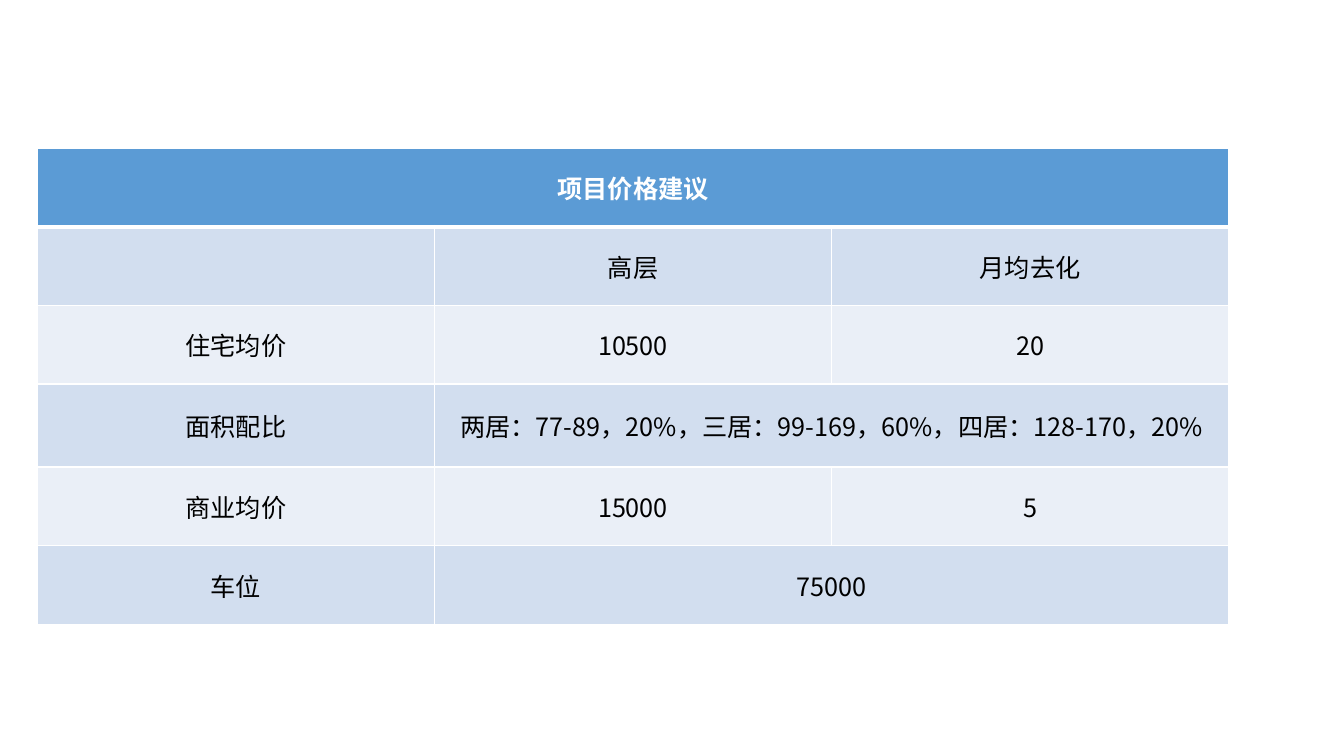
from dataclasses import dataclass

from lxml import etree
from pptx import Presentation
from pptx import util as u
from pptx.dml.color import RGBColor
from pptx.enum import text
from pptx.oxml import ns


# Colours, type and line widths
@dataclass(frozen=True)
class Theme:
    head: str = "5B9BD5"
    dark: str = "D2DEEF"
    light: str = "EAEFF7"
    white: str = "FFFFFF"
    black: str = "000000"
    font: str = "Noto Sans CJK SC"
    size: float = 18
    rule: float = 1
    thick: float = 3


@dataclass(frozen=True)
class Entry:
    words: str = ""
    span: int = 1


THEME = Theme()
LEFT, TOP = 26.64, 105.84
WIDE, HIGH = 283.68, 56.16
COLS = 3

# Price table content
ROWS = [
    [Entry("项目价格建议", span=3)],
    [Entry(), Entry("高层"), Entry("月均去化")],
    [Entry("住宅均价"), Entry("10500"), Entry("20")],
    [Entry("面积配比"),
     Entry("两居：77-89，20%，三居：99-169，60%，四居：128-170，20%", span=2)],
    [Entry("商业均价"), Entry("15000"), Entry("5")],
    [Entry("车位"), Entry("75000", span=2)],
]


def write(frame, words: str, *, color: str, bold: bool = False) -> None:
    """Put one centred line of text in a frame."""
    para = frame.paragraphs[0]
    para.alignment = text.PP_ALIGN.CENTER
    para.font.size = u.Pt(THEME.size)
    if not words:
        return
    run = para.add_run()
    run.text = words
    font = run.font
    font.size, font.bold = u.Pt(THEME.size), bold
    font.color.rgb = RGBColor.from_string(color)
    font.name = THEME.font
    etree.SubElement(run._r.rPr, ns.qn("a:ea"), typeface=THEME.font)


def edge(cell, **widths: float) -> None:
    """Draw white borders, which must come before the fill in the XML."""
    props = cell._tc.get_or_add_tcPr()
    for spot, (side, width) in enumerate(widths.items()):
        line = etree.Element(ns.qn(f"a:ln{side}"), w=str(u.Pt(width)))
        fill = etree.SubElement(line, ns.qn("a:solidFill"))
        etree.SubElement(fill, ns.qn("a:srgbClr"), val=THEME.white)
        props.insert(spot, line)


def paint(cell, row: int) -> None:
    """Give a cell its band colour and borders."""
    band = THEME.dark if row % 2 else THEME.light
    cell.fill.solid()
    cell.fill.fore_color.rgb = RGBColor.from_string(band if row else THEME.head)
    cell.vertical_anchor = text.MSO_ANCHOR.MIDDLE
    edge(cell, L=THEME.rule, R=THEME.rule,
         T=THEME.thick if row == 1 else THEME.rule,
         B=THEME.rule if row else THEME.thick)


def build(slide) -> None:
    """Add the price table."""
    table = slide.shapes.add_table(
        len(ROWS), COLS, u.Pt(LEFT), u.Pt(TOP),
        u.Pt(WIDE * COLS), u.Pt(HIGH * len(ROWS))).table
    for col in table.columns:
        col.width = u.Pt(WIDE)
    for row, items in enumerate(ROWS):
        table.rows[row].height = u.Pt(HIGH)
        for col in range(COLS):
            paint(table.cell(row, col), row)
        col = 0
        for item in items:
            cell = table.cell(row, col)
            if item.span > 1:
                cell.merge(table.cell(row, col + item.span - 1))
            write(cell.text_frame, item.words, bold=row == 0,
                  color=THEME.black if row else THEME.white)
            col += item.span


def main() -> None:
    deck = Presentation()
    deck.slide_width, deck.slide_height = u.Pt(960), u.Pt(540)
    build(deck.slides.add_slide(deck.slide_layouts[6]))
    deck.save("out.pptx")


if __name__ == "__main__":
    main()
